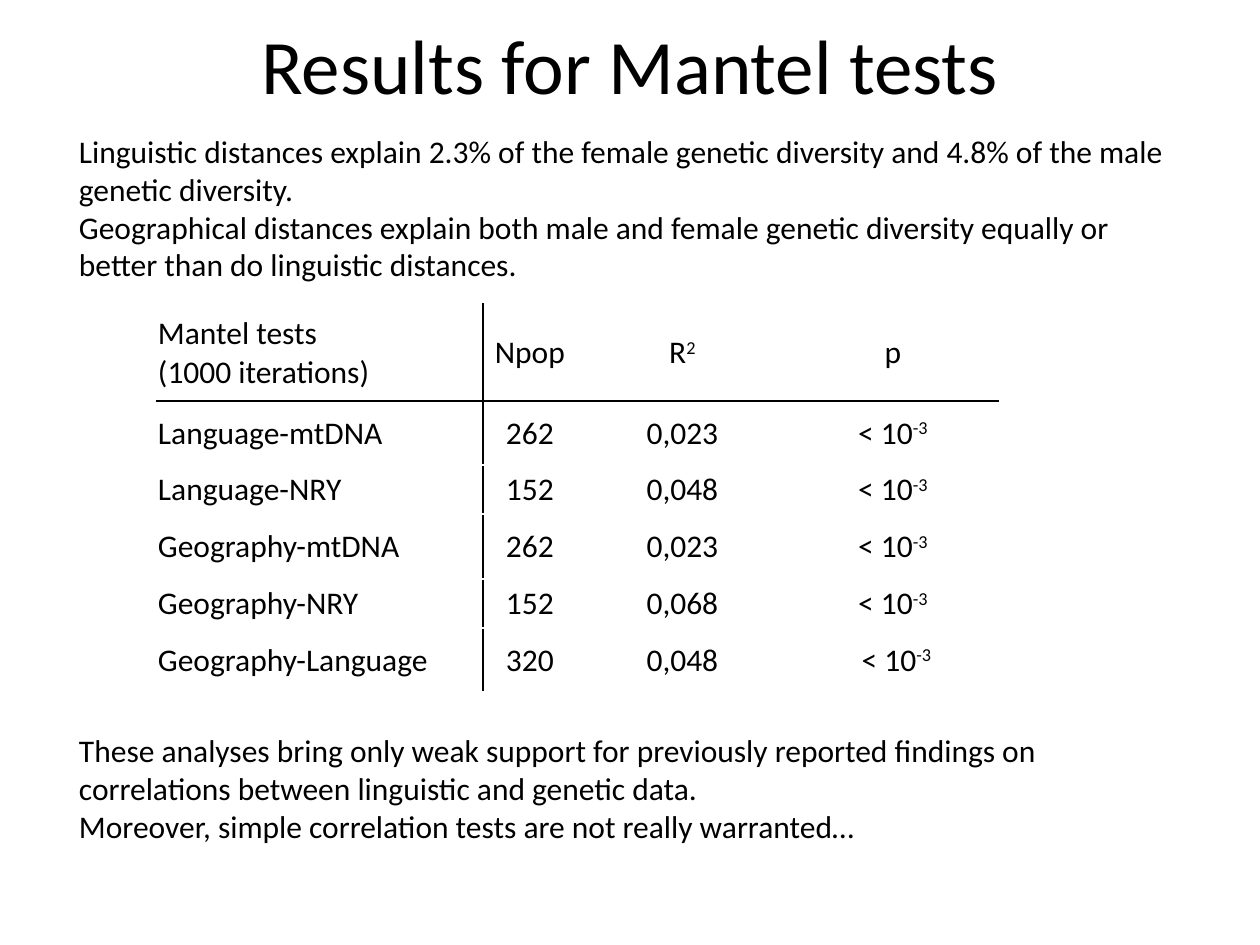
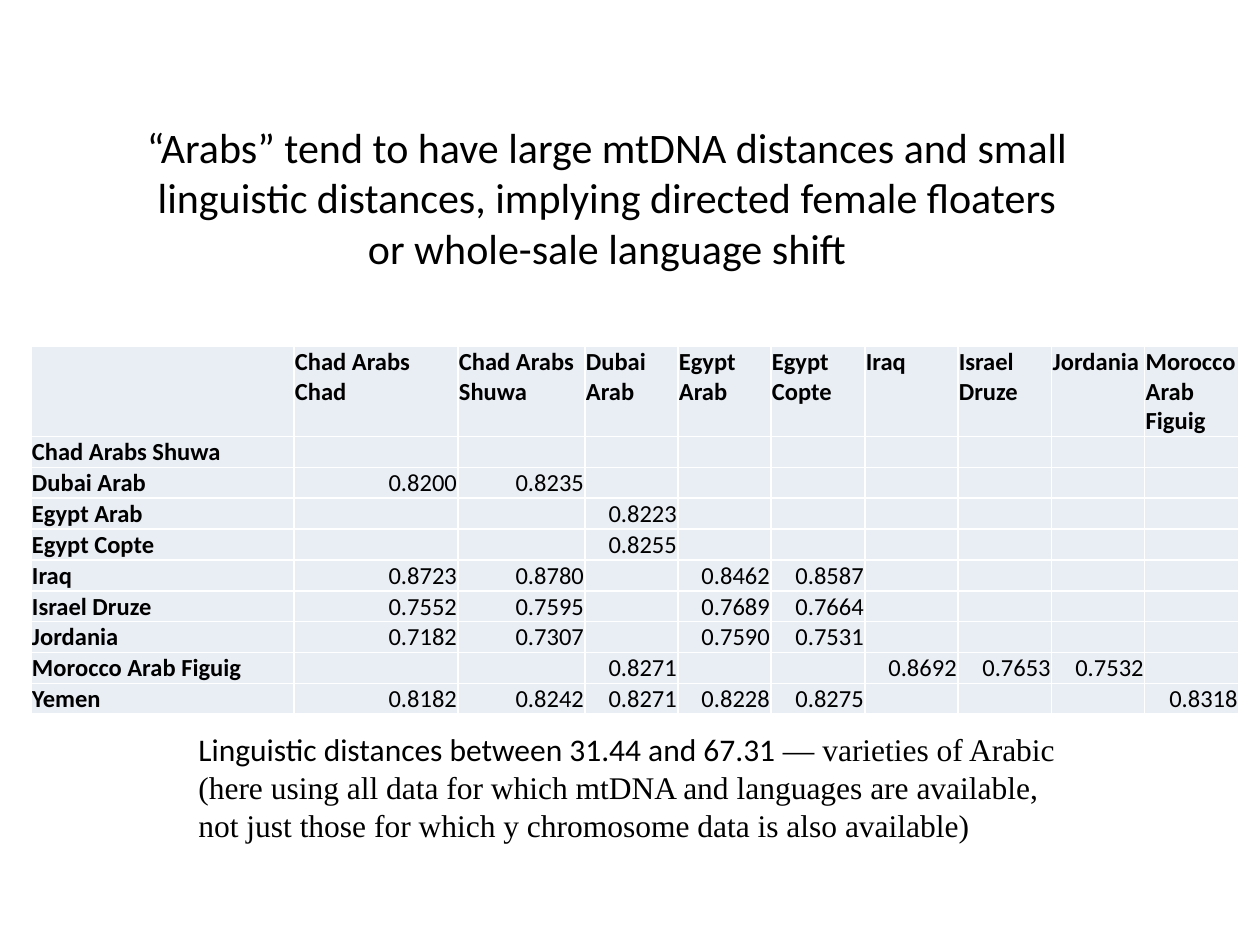
import pptx
import pptx.util
import pptx.dml.color
import pptx.enum.text
import pptx.oxml
import pptx.oxml.ns
from dataclasses import dataclass

SCALE = 914400 / 126
ALIGN = pptx.enum.text.PP_ALIGN
ANCHOR = pptx.enum.text.MSO_ANCHOR
FIT = pptx.enum.text.MSO_AUTO_SIZE


@dataclass(frozen=True)
class Theme:
    ink: str = "000000"
    paper: str = "FFFFFF"
    tint: str = "E9EDF4"
    sans: str = "Calibri"
    serif: str = "Times New Roman"
    title: int = 44
    head: int = 24
    body: int = 18
    small: int = 14


THEME = Theme()

MANTEL = [
    ["Mantel tests\n(1000 iterations)", "Npop", "R^2", "p"],
    ["Language-mtDNA", "262", "0,023", "< 10^-3"],
    ["Language-NRY", "152", "0,048", "< 10^-3"],
    ["Geography-mtDNA", "262", "0,023", "< 10^-3"],
    ["Geography-NRY", "152", "0,068", "< 10^-3"],
    ["Geography-Language", "320", "0,048", " < 10^-3"],
]

ARABS = [
    ["", "Chad Arabs\nChad", "Chad Arabs\nShuwa", "Dubai Arab", "Egypt Arab",
     "Egypt Copte", "Iraq", "Israel Druze", "Jordania", "Morocco Arab Figuig"],
    ["Chad Arabs Shuwa", "", "", "", "", "", "", "", "", ""],
    ["Dubai Arab", "0.8200", "0.8235", "", "", "", "", "", "", ""],
    ["Egypt Arab", "", "", "0.8223", "", "", "", "", "", ""],
    ["Egypt Copte", "", "", "0.8255", "", "", "", "", "", ""],
    ["Iraq", "0.8723", "0.8780", "", "0.8462", "0.8587", "", "", "", ""],
    ["Israel Druze", "0.7552", "0.7595", "", "0.7689", "0.7664", "", "", "", ""],
    ["Jordania", "0.7182", "0.7307", "", "0.7590", "0.7531", "", "", "", ""],
    ["Morocco Arab Figuig", "", "", "0.8271", "", "", "0.8692", "0.7653", "0.7532", ""],
    ["Yemen", "0.8182", "0.8242", "0.8271", "0.8228", "0.8275", "", "", "", "0.8318"],
]


def px(num):
    return pptx.util.Emu(round(num * SCALE))


def rgb(code):
    return pptx.dml.color.RGBColor.from_string(code)


def apply(item, form):
    for key, val in form.items():
        setattr(item, key, val)


def place(shape, box):
    apply(shape, dict(zip(("left", "top", "width", "height"), map(px, box))))


def write(frame, lines, size, align=ALIGN.LEFT, bold=False):
    """Fill a frame; a line is text, with ^ before a raised part, or (text, font) pairs."""
    form = {"size": pptx.util.Pt(size), "bold": bold}
    for pos, line in enumerate(lines):
        para = frame.add_paragraph() if pos else frame.paragraphs[0]
        para.alignment = align
        if not line:
            para._p.get_or_add_endParaRPr().set("sz", str(size * 100))
            continue
        plain = isinstance(line, str)
        parts = [(part, THEME.sans) for part in line.split("^")] if plain else line
        for order, (text, font) in enumerate(parts):
            run = para.add_run()
            run.text = text
            apply(run.font, {**form, "name": font})
            run.font.color.rgb = rgb(THEME.ink)
            if plain and order:
                run._r.get_or_add_rPr().set("baseline", "30000")


def add_page(deck, box, lines, size):
    """Add a title-only slide with its title set."""
    slide = deck.slides.add_slide(deck.slide_layouts[5])
    place(slide.shapes.title, box)
    frame = slide.shapes.title.text_frame
    apply(frame, {"vertical_anchor": ANCHOR.TOP, "auto_size": FIT.NONE})
    write(frame, lines, size, ALIGN.CENTER)
    return slide


def add_block(slide, box, lines):
    """Add wrapped text in a bare outline drawn point by point."""
    left, top, wide, high = box
    right, low = left + wide, top + high
    pen = slide.shapes.build_freeform(left, top, scale=SCALE)
    pen.add_line_segments([(right, top), (right, low), (left, low)])
    block = pen.convert_to_shape()
    block.shadow.inherit = False
    block.fill.background()
    block.line.fill.background()
    apply(block.text_frame, {
        "word_wrap": True, "auto_size": FIT.SHAPE_TO_FIT_TEXT,
        "vertical_anchor": ANCHOR.TOP,
        "margin_left": px(11), "margin_right": px(11),
        "margin_top": px(5), "margin_bottom": px(5)})
    write(block.text_frame, lines, THEME.body)


def add_note(slide, box, lines):
    note = slide.shapes.add_textbox(*map(px, box))
    apply(note.text_frame, {"word_wrap": False, "auto_size": FIT.SHAPE_TO_FIT_TEXT})
    write(note.text_frame, lines, THEME.body)


def edge(cell, inked=""):
    """Border a cell on all sides: ink on the sides named, paper on the rest."""
    props = cell._tc.get_or_add_tcPr()
    space = pptx.oxml.ns.nsdecls("a")
    for side in "LRTB":
        tone = THEME.ink if side in inked else THEME.paper
        props.append(pptx.oxml.parse_xml(
            f'<a:ln{side} {space} w="12700"><a:solidFill>'
            f'<a:srgbClr val="{tone}"/></a:solidFill></a:ln{side}>'))


def add_grid(slide, spot, wides, highs, rows, style):
    """Add a table; style(row, col) gives fill, inked sides, anchor and text format."""
    box = (*spot, sum(wides), sum(highs))
    grid = slide.shapes.add_table(len(rows), len(wides), *map(px, box)).table
    apply(grid, {"first_row": False, "horz_banding": False})
    for col, wide in zip(grid.columns, wides):
        col.width = px(wide)
    for row, high in zip(grid.rows, highs):
        row.height = px(high)
    for y, row in enumerate(rows):
        for x, text in enumerate(row):
            cell = grid.cell(y, x)
            fill, inked, anchor, form = style(y, x)
            apply(cell, {
                "margin_left": px(1), "margin_right": px(1), "margin_top": px(1),
                "margin_bottom": 0, "vertical_anchor": anchor})
            edge(cell, inked)
            if fill:
                cell.fill.solid()
                cell.fill.fore_color.rgb = rgb(fill)
            else:
                cell.fill.background()
            write(cell.text_frame, text.split("\n"), **form)


def ruled(y, x):
    """Open cells, ruled below the head row and right of the first column."""
    inked = {0: "B", 1: "T"}.get(y, "") + {0: "R", 1: "L"}.get(x, "")
    align = ALIGN.CENTER if x else ALIGN.LEFT
    return None, inked, ANCHOR.MIDDLE, {"size": THEME.body, "align": align}


def tinted(y, x):
    """Tinted cells with bold labels and values set right."""
    value = bool(y and x)
    align = ALIGN.RIGHT if value else ALIGN.LEFT
    anchor = ANCHOR.BOTTOM if y else ANCHOR.TOP
    return THEME.tint, "", anchor, {
        "size": THEME.small, "align": align, "bold": not value}


def add_mantel(deck):
    slide = add_page(deck, (63, 11, 1134, 158), ["Results for Mantel tests"], THEME.title)
    add_block(slide, (68, 127, 1111, 166), [
        "Linguistic distances explain 2.3% of the female genetic diversity"
        " and 4.8% of the male genetic diversity.",
        "Geographical distances explain both male and female genetic diversity"
        " equally or better than do linguistic distances."])
    add_block(slide, (68, 726, 1111, 127), [
        "These analyses bring only weak support for previously reported findings"
        " on correlations between linguistic and genetic data.",
        "Moreover, simple correlation tests are not really warranted…"])
    add_grid(slide, (157, 304), [326, 94, 211, 210],
             [97, 64, 49, 65, 49, 64], MANTEL, ruled)


def add_arabs(deck):
    slide = add_page(deck, (130, 115, 954, 165), [
        "“Arabs” tend to have large mtDNA distances and small",
        "linguistic distances, implying directed female floaters",
        "or whole-sale language shift"], THEME.head)
    slide.shapes.title.text_frame.word_wrap = False
    add_grid(slide, (31, 346), [263, 164, 127, 93] + [93, 94] * 3,
             [26] * len(ARABS), ARABS, tinted)
    add_note(slide, (186, 724, 892, 127), [
        [("Linguistic distances between 31.44 and 67.31 ", THEME.sans),
         ("— varieties of Arabic", THEME.serif)],
        [("(here using all data for which mtDNA and languages are available,", THEME.serif)],
        [("not just those for which y chromosome data is also available)", THEME.serif)],
    ])


def main():
    deck = pptx.Presentation()
    apply(deck, {"slide_width": px(1260), "slide_height": px(945)})
    add_mantel(deck)
    add_arabs(deck)
    deck.save("out.pptx")


if __name__ == "__main__":
    main()
